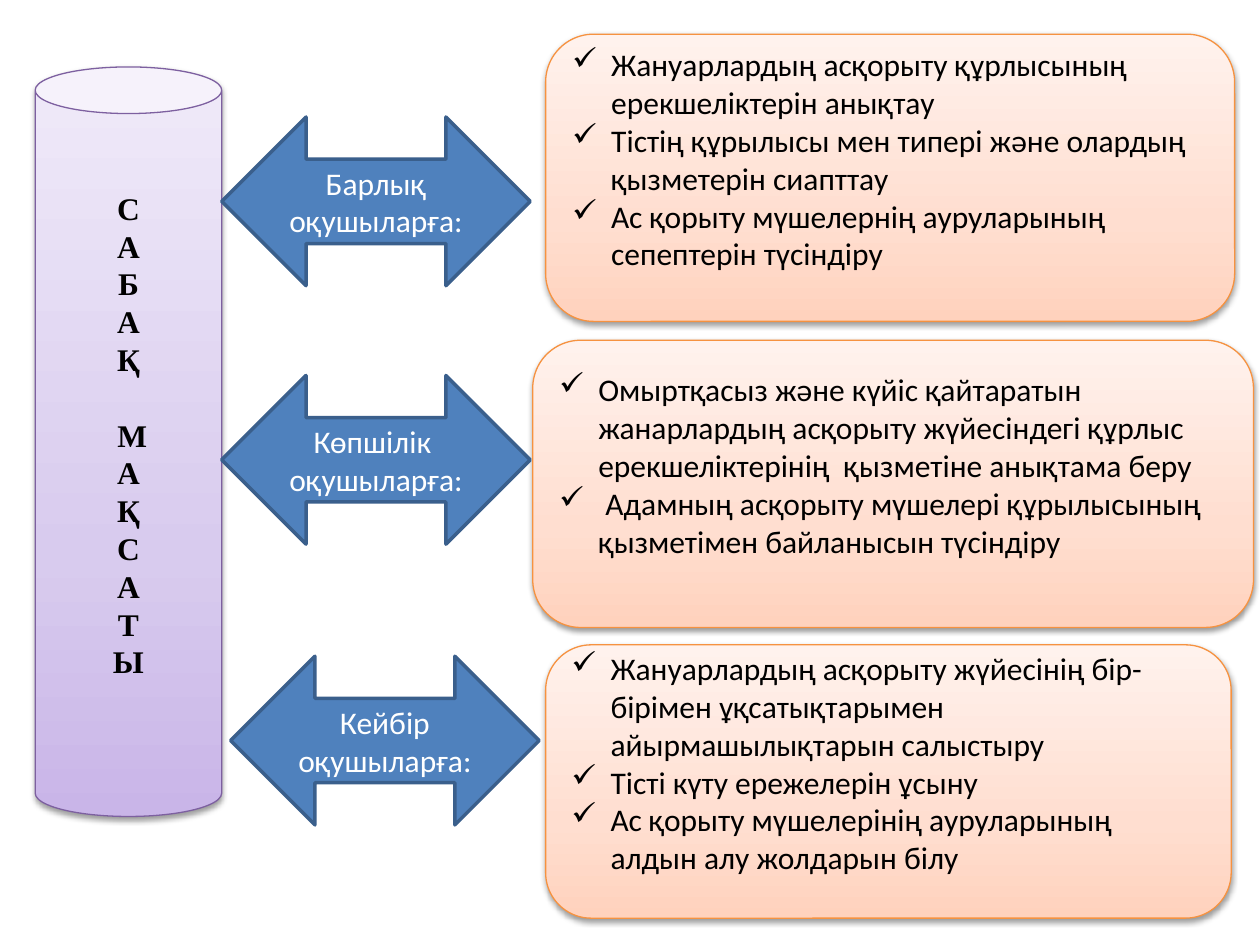
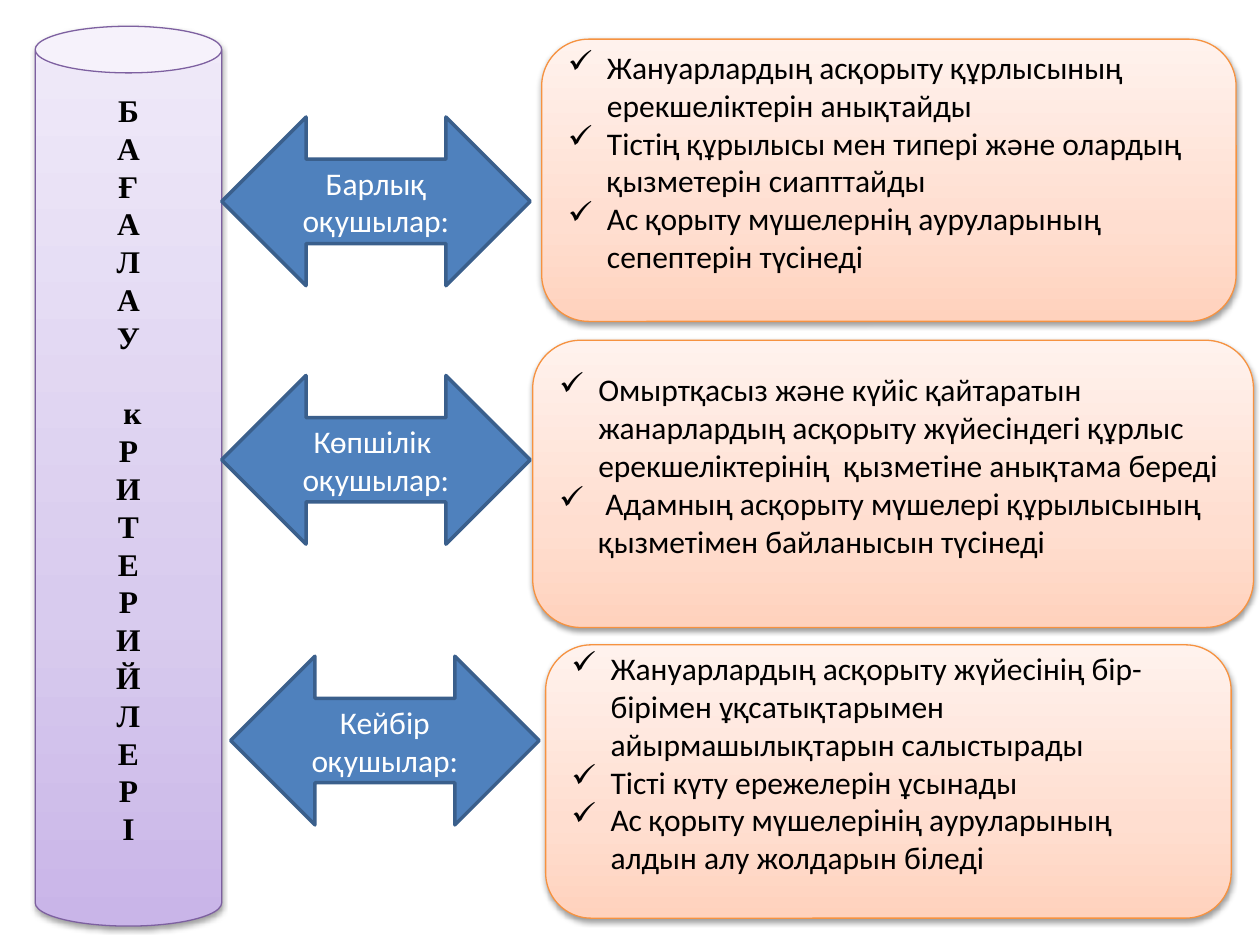
from lxml import etree
from pptx import Presentation
from pptx.dml.color import RGBColor
from pptx.enum.shapes import MSO_SHAPE as Preset
from pptx.enum.text import MSO_ANCHOR as Anchor, PP_ALIGN as Align
from pptx.oxml import parse_xml
from pptx.oxml.ns import nsdecls, qn
from pptx.util import Cm, Pt

COLORS = {
    "black": "000000", "white": "FFFFFF",
    "arrow": "4F81BD", "arrow_edge": "3A5F8C",
    "goal_edge": "F69240", "pillar_edge": "7D60A0",
}
# Gradient stops from the bottom of a shape to its top
GRADIENTS = {
    "goal": {0: "FFD2BD", 35: "FFDED0", 100: "FFF2ED"},
    "pillar": {0: "C9B5E8", 35: "D8CBEE", 100: "F0EAF9"},
}
BODY_FONT, PILLAR_FONT = "Calibri", "Times New Roman"
TEXT_SIZE, LINE_PITCH = Pt(18), Pt(21.6)
INDENT = Cm(0.79)

# Boxes in cm: left, top, width, height
ARROW_SIZE = (6.22, 3.4)
ARROW_BOXES = [(left, top, *ARROW_SIZE)
               for left, top in ((4.47, 2.36), (4.47, 7.57), (4.65, 13.23))]
LOWER_GOAL_BOXES = [(10.74, 6.86, 14.53, 5.79), (11, 13, 13.82, 5.51)]

SLIDES = [
    {
        "pillar": ("САБАҚ", "МАҚСАТЫ"),
        "pillar_box": (0.71, 1.35, 3.76, 15.11),
        "top_goal_box": (11, 0.69, 13.89, 5.79),
        "pupils": "оқушыларға:",
        "goals": [
            ["Жануарлардың асқорыту құрлысының ерекшеліктерін анықтау",
             "Тістің құрылысы мен типері және олардың қызметерін сиапттау",
             "Ас қорыту мүшелернің ауруларының сепептерін түсіндіру"],
            ["Омыртқасыз және күйіс қайтаратын жанарлардың асқорыту жүйесіндегі "
             "құрлыс ерекшеліктерінің  қызметіне анықтама беру",
             " Адамның асқорыту мүшелері құрылысының қызметімен байланысын түсіндіру"],
            ["Жануарлардың асқорыту жүйесінің бір-бірімен ұқсатықтарымен "
             "айырмашылықтарын салыстыру",
             "Тісті күту ережелерін ұсыну",
             "Ас қорыту мүшелерінің ауруларының алдын алу жолдарын білу"],
        ],
    },
    {
        "pillar": ("БАҒАЛАУ", "кРИТЕРИЙЛЕРІ"),
        "pillar_box": (0.71, 0.53, 3.76, 18.14),
        "top_goal_box": (10.92, 0.79, 14, 5.69),
        "pupils": "оқушылар:",
        "goals": [
            ["Жануарлардың асқорыту құрлысының ерекшеліктерін анықтайды",
             "Тістің құрылысы мен типері және олардың қызметерін сиапттайды",
             "Ас қорыту мүшелернің ауруларының сепептерін түсінеді"],
            ["Омыртқасыз және күйіс қайтаратын жанарлардың асқорыту жүйесіндегі "
             "құрлыс ерекшеліктерінің  қызметіне анықтама береді",
             " Адамның асқорыту мүшелері құрылысының қызметімен байланысын түсінеді"],
            ["Жануарлардың асқорыту жүйесінің бір-бірімен ұқсатықтарымен "
             "айырмашылықтарын салыстырады",
             "Тісті күту ережелерін ұсынады",
             "Ас қорыту мүшелерінің ауруларының алдын алу жолдарын біледі"],
        ],
    },
]


def rgb(name):
    return RGBColor.from_string(COLORS[name])


def add_panel(slide, preset, box, edge, edge_width):
    """Add an outlined shape whose text is centred vertically."""
    panel = slide.shapes.add_shape(preset, *map(Cm, box))
    panel.shadow.inherit = False
    panel.line.color.rgb = rgb(edge)
    panel.line.width = Pt(edge_width)
    frame = panel.text_frame
    frame.word_wrap = True
    frame.vertical_anchor = Anchor.MIDDLE
    frame.margin_top = frame.margin_bottom = 0
    return panel


def shade(panel, gradient):
    """Give a panel an upward gradient and a soft shadow below."""
    stops = "".join(
        f'<a:gs pos="{place * 1000}"><a:srgbClr val="{color}"/></a:gs>'
        for place, color in GRADIENTS[gradient].items())
    panel.fill.background()
    properties = panel.fill._xPr
    properties.replace(properties.find(qn("a:noFill")), parse_xml(
        f'<a:gradFill {nsdecls("a")} rotWithShape="1"><a:gsLst>{stops}</a:gsLst>'
        '<a:lin ang="16200000" scaled="0"/></a:gradFill>'))
    properties.find(qn("a:effectLst")).append(parse_xml(
        f'<a:outerShdw {nsdecls("a")} blurRad="40000" dist="20000" dir="5400000" '
        f'rotWithShape="0"><a:srgbClr val="{COLORS["black"]}">'
        '<a:alpha val="38000"/></a:srgbClr></a:outerShdw>'))


def write_lines(panel, lines, align, font, color, bold=False):
    """Write one paragraph per line and return the paragraphs."""
    frame = panel.text_frame
    paragraphs = []
    for index, line in enumerate(lines):
        paragraph = frame.add_paragraph() if index else frame.paragraphs[0]
        paragraph.alignment = align
        paragraph.line_spacing = LINE_PITCH
        run = paragraph.add_run()
        run.text = line
        run.font.name, run.font.size, run.font.bold = font, TEXT_SIZE, bold
        run.font.color.rgb = rgb(color)
        paragraphs.append(paragraph)
    return paragraphs


def add_goal(slide, box, goals):
    """Rounded box with a list of ticked goals."""
    panel = add_panel(slide, Preset.ROUNDED_RECTANGLE, box, "goal_edge", 0.75)
    shade(panel, "goal")
    panel.text_frame.margin_bottom = LINE_PITCH
    for paragraph in write_lines(panel, goals, Align.LEFT, BODY_FONT, "black"):
        properties = paragraph._p.get_or_add_pPr()
        properties.set("marL", str(INDENT))
        properties.set("indent", str(-INDENT))
        etree.SubElement(properties, qn("a:buChar")).set("char", "✓")


def add_arrow(slide, box, label):
    """Double arrow naming a group of pupils."""
    arrow = add_panel(slide, Preset.LEFT_RIGHT_ARROW, box, "arrow_edge", 2)
    arrow.fill.solid()
    arrow.fill.fore_color.rgb = rgb("arrow")
    write_lines(arrow, label, Align.CENTER, BODY_FONT, "white")


def add_pillar(slide, box, words):
    """Cylinder with two words written letter under letter."""
    pillar = add_panel(slide, Preset.CAN, box, "pillar_edge", 0.75)
    shade(pillar, "pillar")
    pillar.text_frame.margin_bottom = LINE_PITCH
    first, second = words
    letters = [*first, f" {second[0]}", *second[1:]]
    paragraphs = write_lines(pillar, letters, Align.CENTER, PILLAR_FONT, "black", True)
    paragraphs[len(first)].space_before = LINE_PITCH


def add_goals_slide(deck, content):
    slide = deck.slides.add_slide(deck.slide_layouts[6])
    # Goals on the right
    goal_boxes = [content["top_goal_box"], *LOWER_GOAL_BOXES]
    for box, goals in zip(goal_boxes, content["goals"]):
        add_goal(slide, box, goals)
    # Pillar on the left
    add_pillar(slide, content["pillar_box"], content["pillar"])
    # Arrows between them
    pupils = content["pupils"]
    labels = [[f"Барлық {pupils}"], ["Көпшілік ", pupils], [f"Кейбір {pupils}"]]
    for box, label in zip(ARROW_BOXES, labels):
        add_arrow(slide, box, label)


def main():
    deck = Presentation()
    deck.slide_width, deck.slide_height = Cm(25.4), Cm(19.05)
    for content in SLIDES:
        add_goals_slide(deck, content)
    deck.save("out.pptx")


if __name__ == "__main__":
    main()
